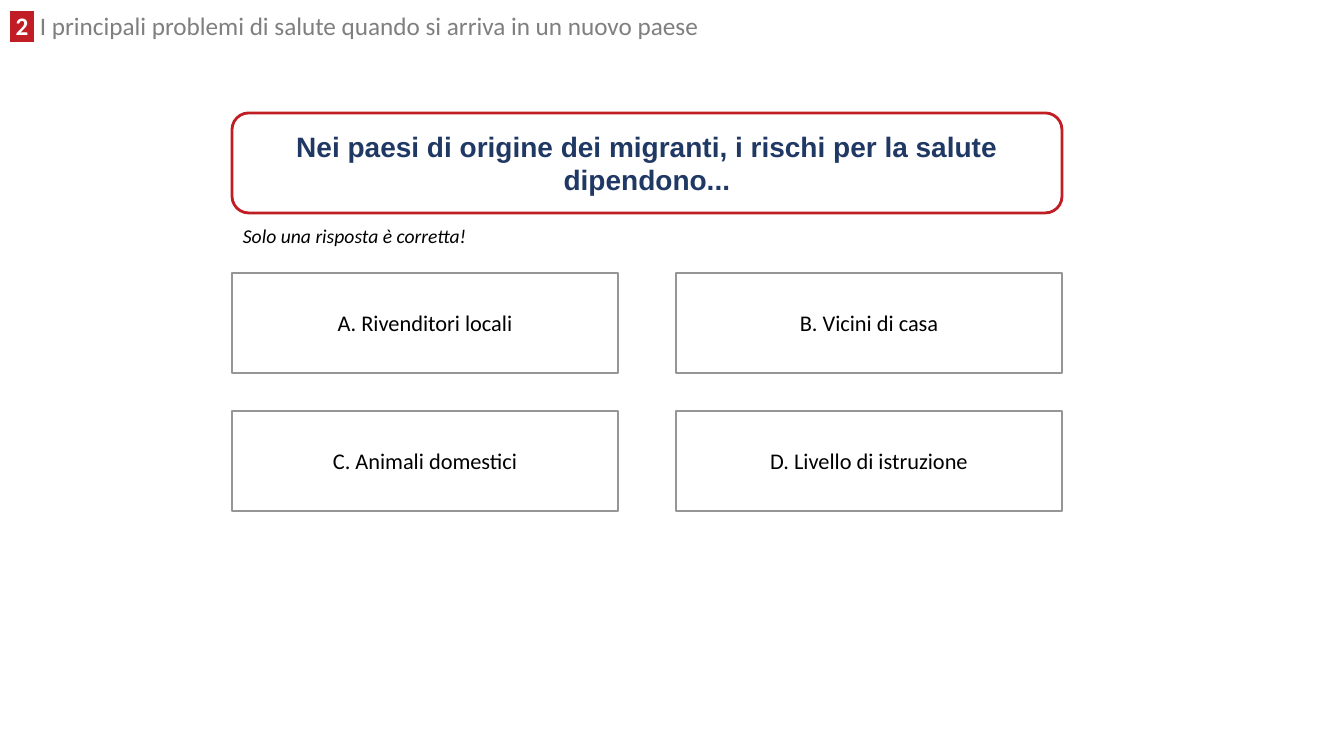
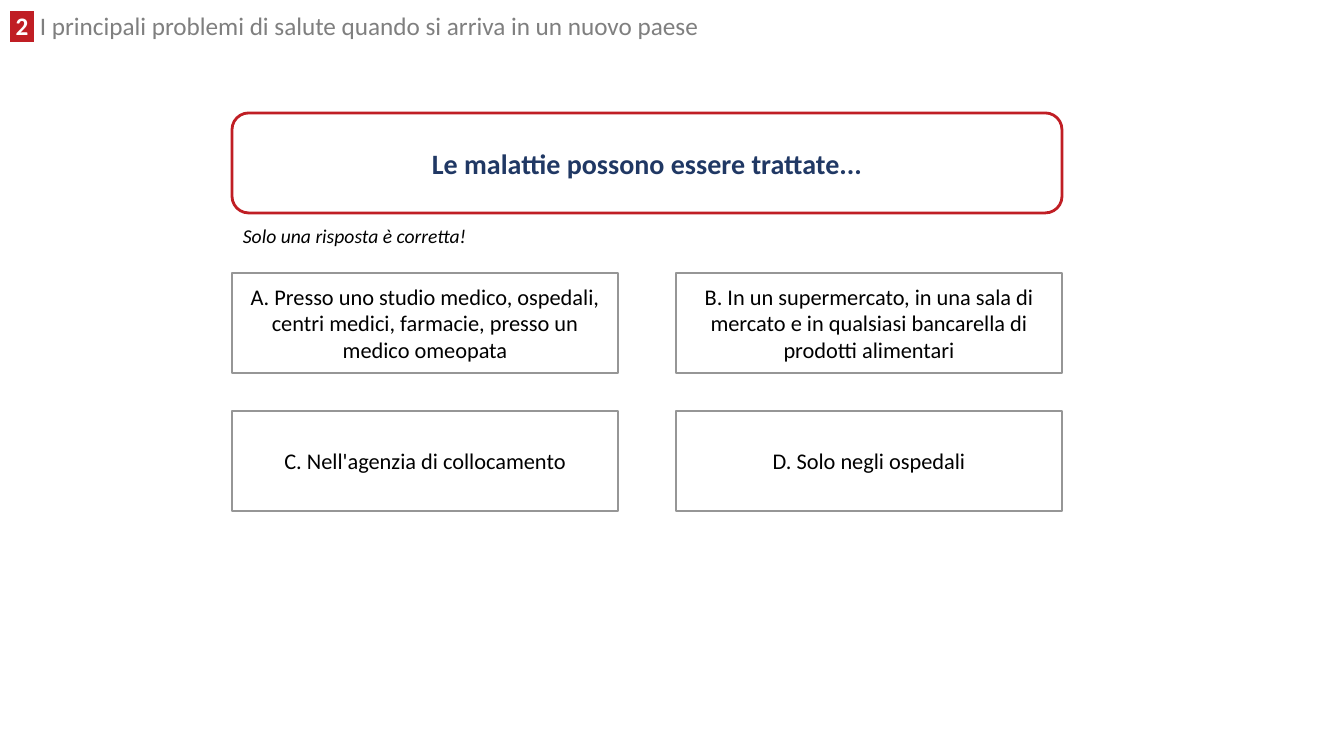
"""Build two quiz slides that share a chapter header, a question box and an answer grid."""
import pptx
import pptx.dml.color
import pptx.enum.shapes
import pptx.enum.text
import pptx.oxml
import pptx.oxml.ns
import pptx.util

PX = 12192000 / 1344
SLIDE_SIZE = (1344, 756)
COLORS = {
    "white": "FFFFFF",
    "red": "C01E24",
    "navy": "203864",
    "title_gray": "7F7F7F",
    "border_gray": "969696",
    "black": "000000",
}
HEADER_BOX = (0, 11, 861, 34)
QUIZ_BOX = (232, 113, 830, 398)
CHAPTER_NUMBER = " 2 "
CHAPTER_TITLE = " I principali problemi di salute quando si arriva in un nuovo paese"
HINT = "Solo una risposta è corretta!"
ALIGN = pptx.enum.text.PP_ALIGN
ANCHOR = pptx.enum.text.MSO_ANCHOR
SHAPE = pptx.enum.shapes.MSO_SHAPE

QUIZZES = [
    {
        "question": "Nei paesi di origine dei migranti, i rischi per la salute dipendono...",
        "question_font": "Arial",
        "answers": [
            "A. Rivenditori locali",
            "B. Vicini di casa",
            "C. Animali domestici",
            "D. Livello di istruzione",
        ],
    },
    {
        "question": "Le malattie possono essere trattate...",
        "question_font": "Calibri",
        "answers": [
            "A. Presso uno studio medico, ospedali, centri medici, farmacie, presso un medico omeopata",
            "B. In un supermercato, in una sala di mercato e in qualsiasi bancarella di prodotti alimentari",
            "C. Nell'agenzia di collocamento",
            "D. Solo negli ospedali",
        ],
    },
]


def emu(length):
    """Turn px into EMU."""
    return pptx.util.Emu(round(length * PX))


def rgb(name):
    """Look up a colour by name."""
    return pptx.dml.color.RGBColor.from_string(COLORS[name])


def add_run(paragraph, text, size, color, font_name="Calibri", bold=False, italic=False):
    """Append one formatted run to a paragraph."""
    run = paragraph.add_run()
    run.text = text
    font = run.font
    font.size = pptx.util.Pt(size)
    font.name = font_name
    font.bold = bold
    font.italic = italic
    font.color.rgb = rgb(color)
    return run


def highlight(run, color):
    """Put a highlight colour behind a run."""
    mark = pptx.oxml.parse_xml(
        f'<a:highlight {pptx.oxml.ns.nsdecls("a")}><a:srgbClr val="{COLORS[color]}"/></a:highlight>'
    )
    properties = run.font._element
    properties.find(pptx.oxml.ns.qn("a:solidFill")).addnext(mark)


def prepare_frame(shape, anchor, alignment):
    """Set wrapping, anchor and alignment, and return the first paragraph."""
    frame = shape.text_frame
    frame.word_wrap = True
    frame.auto_size = pptx.enum.text.MSO_AUTO_SIZE.NONE
    frame.vertical_anchor = anchor
    paragraph = frame.paragraphs[0]
    paragraph.alignment = alignment
    return paragraph


def add_outlined_box(slide, box, kind, line_color):
    """Add a white box with a coloured outline and return its paragraph."""
    shape = slide.shapes.add_shape(kind, *map(emu, box))
    shape.shadow.inherit = False
    shape.fill.solid()
    shape.fill.fore_color.rgb = rgb("white")
    shape.line.color.rgb = rgb(line_color)
    shape.line.width = pptx.util.Pt(2)
    return prepare_frame(shape, ANCHOR.MIDDLE, ALIGN.CENTER)


def add_header(slide, box):
    """Format the title placeholder as the numbered chapter header."""
    title = slide.shapes.title
    title.left, title.top, title.width, title.height = map(emu, box)
    paragraph = prepare_frame(title, ANCHOR.TOP, ALIGN.LEFT)
    paragraph.line_spacing = 0.8
    highlight(add_run(paragraph, CHAPTER_NUMBER, 18, "white", bold=True), "red")
    add_run(paragraph, CHAPTER_TITLE, 18, "title_gray")


def add_question(slide, box, text, font_name):
    """Add the rounded question box."""
    paragraph = add_outlined_box(slide, box, SHAPE.ROUNDED_RECTANGLE, "red")
    add_run(paragraph, text, 20, "navy", font_name, bold=True)


def add_hint(slide, box):
    """Add the italic hint above the answers."""
    text_box = slide.shapes.add_textbox(*map(emu, box))
    paragraph = prepare_frame(text_box, ANCHOR.TOP, ALIGN.LEFT)
    add_run(paragraph, HINT, 14, "black", italic=True)


def add_answers(slide, box, answers, columns=2, column_gap=58, row_gap=38):
    """Fill a box with an even grid of answers."""
    left, top, width, height = box
    rows = len(answers) // columns
    cell_width = (width - column_gap * (columns - 1)) // columns
    cell_height = (height - row_gap * (rows - 1)) // rows
    for index, answer in enumerate(answers):
        row, column = divmod(index, columns)
        cell = (
            left + column * (cell_width + column_gap),
            top + row * (cell_height + row_gap),
            cell_width,
            cell_height,
        )
        paragraph = add_outlined_box(slide, cell, SHAPE.RECTANGLE, "border_gray")
        add_run(paragraph, answer, 16, "black")


def add_quiz(slide, box, quiz):
    """Place question, hint and answers inside a box."""
    left, top, width, height = box
    answers_offset = 160
    add_question(slide, (left, top, width, 100), quiz["question"], quiz["question_font"])
    add_hint(slide, (left + 1, top + 106, 342, 34))
    answers_box = (left, top + answers_offset, width, height - answers_offset)
    add_answers(slide, answers_box, quiz["answers"])


def main():
    """Build and save the presentation."""
    presentation = pptx.Presentation()
    presentation.slide_width, presentation.slide_height = map(emu, SLIDE_SIZE)
    title_only = presentation.slide_layouts[5]
    for quiz in QUIZZES:
        slide = presentation.slides.add_slide(title_only)
        add_header(slide, HEADER_BOX)
        add_quiz(slide, QUIZ_BOX, quiz)
    presentation.save("out.pptx")


if __name__ == "__main__":
    main()
